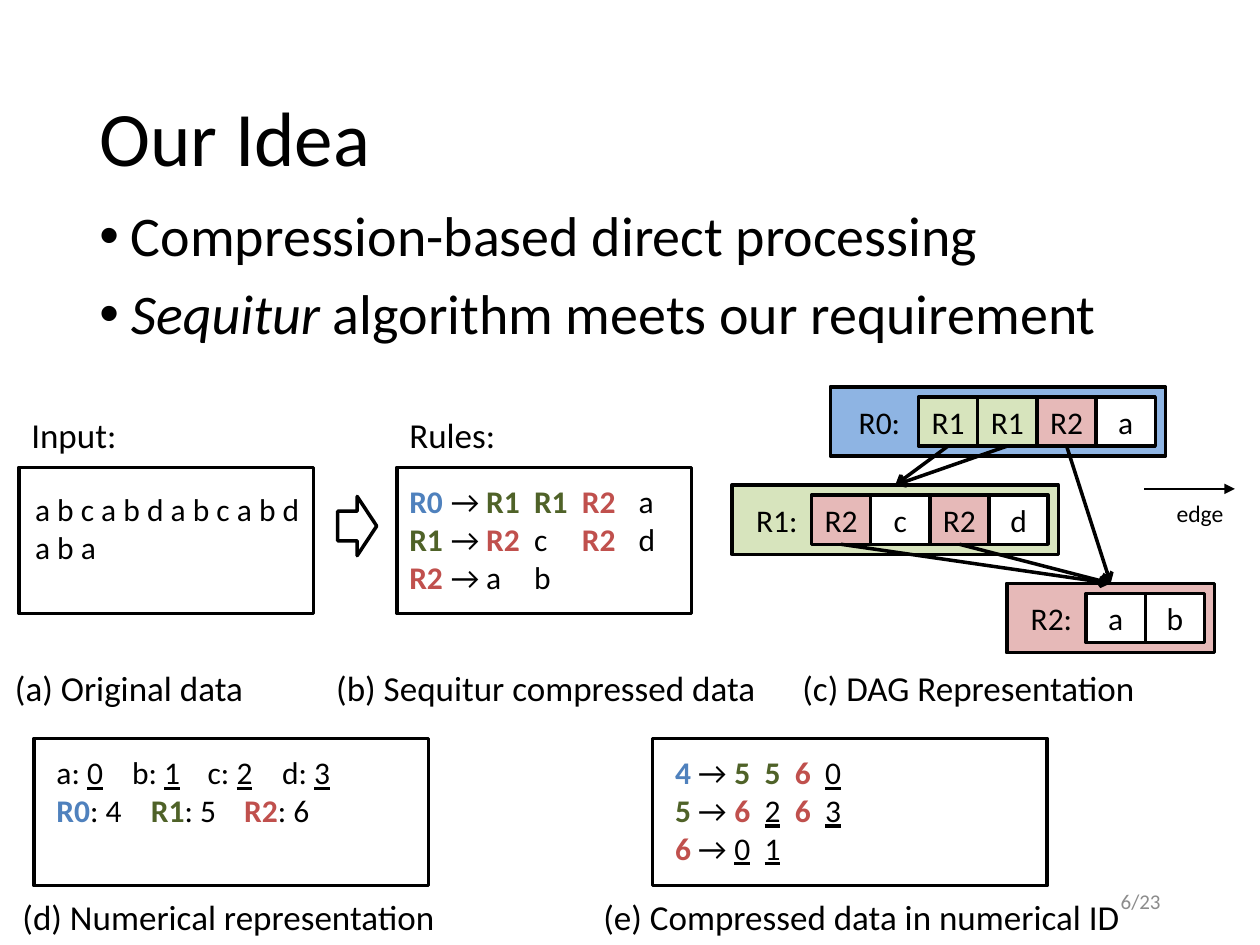
from dataclasses import dataclass

from lxml.etree import SubElement
from pptx import Presentation
from pptx.dml.color import RGBColor
from pptx.enum.shapes import MSO_CONNECTOR as Connector, MSO_SHAPE as Shape
from pptx.enum.text import MSO_ANCHOR as Anchor, PP_ALIGN as Align
from pptx.oxml.ns import qn
from pptx.util import Inches, Pt


@dataclass(frozen=True)
class Theme:
    font: str = "Calibri"
    black: str = "000000"
    white: str = "FFFFFF"
    grey: str = "8C8C8C"
    title: float = 44
    bullet: float = 32
    caption: float = 20
    body: float = 18
    edge: float = 13.5
    number: float = 12
    line: float = 2


THEME = Theme()
WIDTH, HEIGHT = 10, 7.5

# Span styles: one colour per rule, italics for terms, underlines for word IDs
STYLES = {
    "": {},
    "R0": {"color": "4F81BD", "bold": True},
    "R1": {"color": "4F6228", "bold": True},
    "R2": {"color": "C0504D", "bold": True},
    "term": {"italic": True},
    "id": {"underline": True},
}

# Content: a line is a list of (text, style) spans; tabs separate its columns
TITLE = [[("Our Idea", "")]]
BULLETS = [
    [("Compression-based direct processing", "")],
    [("Sequitur", "term"), (" algorithm meets our requirement", "")],
]
INPUT = [[("a b c a b d a b c a b d a b a", "")]]
RULES = [
    [("R0", "R0"), ("\t→\t", ""), ("R1\tR1\t", "R1"), ("R2", "R2"), ("\ta", "")],
    [("R1", "R1"), ("\t→\t", ""), ("R2", "R2"), ("\tc\t", ""), ("R2", "R2"), ("\td", "")],
    [("R2", "R2"), ("\t→\ta\tb", "")],
]
NUMBERING = [
    [("a: ", ""), ("0", "id"), ("\tb: ", ""), ("1", "id"),
     ("\tc: ", ""), ("2", "id"), ("\td: ", ""), ("3", "id")],
    [("R0", "R0"), (": 4\t", ""), ("R1", "R1"), (": 5\t", ""), ("R2", "R2"), (": 6", "")],
]
NUMERIC_RULES = [
    [("4", "R0"), (" →\t", ""), ("5\t5\t", "R1"), ("6", "R2"), ("\t", ""), ("0", "id")],
    [("5", "R1"), (" →\t", ""), ("6", "R2"), ("\t", ""), ("2", "id"),
     ("\t", ""), ("6", "R2"), ("\t", ""), ("3", "id")],
    [("6", "R2"), (" →\t", ""), ("0", "id"), ("\t", ""), ("1", "id")],
]
RULE_STOPS = [[0.33, 0.61, 0.99, 1.37, 1.82]] * 3
NUMBERING_STOPS = [[0.6, 1.2, 1.79], [0.75, 1.49]]
NUMERIC_STOPS = [[0.47, 0.71, 0.95, 1.19]] * 3

# Panels: frame, text position, lines, tab stops
TOP_FRAME, BOTTOM_FRAME = (2.34, 1.16), (3.13, 1.17)
PANELS = [
    ((0.15, 3.71, *TOP_FRAME), (0.18, 3.84, 2.43, 0.71), INPUT, None),
    ((3.15, 3.71, *TOP_FRAME), (3.15, 3.78, 2.5, 1.01), RULES, RULE_STOPS),
    ((0.27, 5.86, *BOTTOM_FRAME), (0.35, 5.93, 2.66, 0.71), NUMBERING, NUMBERING_STOPS),
    ((5.18, 5.86, *BOTTOM_FRAME), (5.26, 5.93, 2.66, 1.01), NUMERIC_RULES, NUMERIC_STOPS),
]
CAPTIONS = [
    ("Input:", 0.15, 3.23, 1.25),
    ("Rules:", 3.15, 3.23, 1.25),
    ("(a) Original data", 0.02, 5.24, 2.81),
    ("(b) Sequitur compressed data", 2.57, 5.24, 3.67),
    ("(c) DAG Representation", 6.27, 5.24, 3.13),
    ("(d) Numerical representation", 0.08, 7.06, 4.05),
    ("(e) Compressed data in numerical ID", 4.69, 7.06, 4.71),
]

# DAG nodes: name -> left edge, label width, fill, symbols
NODES = {
    "R0": (6.59, 0.62, "8EB4E3", ["R1", "R1", "R2", "a"]),
    "R1": (5.81, 0.55, "D7E4BD", ["R2", "c", "R2", "d"]),
    "R2": (7.99, 0.55, "E6B9B8", ["a", "b"]),
}
DAG_TOP, DAG_STEP = 3.07, 0.78
CELL_W, CELL_H, PAD = 0.47, 0.39, 0.08


def write(shape, lines, size=THEME.body, color=THEME.black, align=Align.LEFT,
          anchor=Anchor.TOP, stops=None, spacing=None, before=None, bullet=None, inset=None):
    frame = shape.text_frame
    frame.word_wrap = True
    frame.vertical_anchor = anchor
    if inset is not None:
        frame.margin_left = frame.margin_right = Inches(inset)
        frame.margin_top = frame.margin_bottom = Inches(inset)
    for index, spans in enumerate(lines):
        para = frame.add_paragraph() if index else frame.paragraphs[0]
        para.alignment = align
        para.line_spacing = spacing
        if before is not None:
            para.space_before = Pt(before)
        properties = para._p.get_or_add_pPr()
        if bullet:
            properties.set("marL", str(Inches(0.25)))
            properties.set("indent", str(-Inches(0.25)))
            SubElement(properties, qn("a:buFont"), typeface="Arial")
            SubElement(properties, qn("a:buChar"), char=bullet)
        if stops:
            tabs = SubElement(properties, qn("a:tabLst"))
            for stop in stops[index]:
                SubElement(tabs, qn("a:tab"), pos=str(Inches(stop)), algn="l")
        for text, style in spans:
            look = STYLES[style]
            span = para.add_run()
            span.text = text
            font = span.font
            font.name, font.size = THEME.font, Pt(size)
            font.color.rgb = RGBColor.from_string(look.get("color", color))
            font.bold = look.get("bold", False)
            font.italic = look.get("italic", False)
            font.underline = look.get("underline", False)


def add_text(page, place, lines, **style):
    box = page.shapes.add_textbox(*map(Inches, place))
    write(box, lines, **style)
    return box


def add_box(page, place, fill=None, outlined=True, kind=Shape.RECTANGLE, text=None):
    box = page.shapes.add_shape(kind, *map(Inches, place))
    box.shadow.inherit = False
    if fill:
        box.fill.solid()
        box.fill.fore_color.rgb = RGBColor.from_string(fill)
    else:
        box.fill.background()
    if outlined:
        box.line.color.rgb = RGBColor.from_string(THEME.black)
        box.line.width = Pt(THEME.line)
    else:
        box.line.fill.background()
    if text:
        write(box, [[(text, "")]], align=Align.CENTER, anchor=Anchor.MIDDLE, inset=0)
    return box


def add_arrow(page, start=(0, 0), end=(0, 0), source=None, target=None,
              width=THEME.line, head="arrow"):
    arrow = page.shapes.add_connector(Connector.STRAIGHT, *map(Inches, (*start, *end)))
    if source is not None:
        arrow.begin_connect(source, 2)
        arrow.end_connect(target, 0)
    arrow.line.color.rgb = RGBColor.from_string(THEME.black)
    arrow.line.width = Pt(width)
    SubElement(arrow.line._get_or_add_ln(), qn("a:tailEnd"), type=head)
    SubElement(arrow._element.spPr, qn("a:effectLst"))


def add_dag(page):
    nodes, links = {}, []
    for row, (name, (left, label, fill, symbols)) in enumerate(NODES.items()):
        top = DAG_TOP + row * DAG_STEP
        width = label + len(symbols) * CELL_W + 2 * PAD
        nodes[name] = add_box(page, (left, top, width, CELL_H + 2 * PAD), fill)
        add_box(page, (left + PAD, top + PAD, label, CELL_H), fill, False, text=name + ":")
        for column, symbol in enumerate(symbols):
            place = (left + PAD + label + column * CELL_W, top + PAD, CELL_W, CELL_H)
            color = NODES[symbol][2] if symbol in NODES else THEME.white
            cell = add_box(page, place, color, text=symbol)
            if symbol in NODES:
                links.append((cell, symbol))
    for cell, symbol in links:
        add_arrow(page, source=cell, target=nodes[symbol])


def main():
    deck = Presentation()
    deck.slide_width, deck.slide_height = Inches(WIDTH), Inches(HEIGHT)
    page = deck.slides.add_slide(deck.slide_layouts[5])

    # Title and bullets
    title = page.shapes.title
    title.left, title.top, title.width, title.height = map(Inches, (0.69, 0.4, 8.62, 1.45))
    write(title, TITLE, size=THEME.title, anchor=Anchor.MIDDLE, spacing=0.9)
    add_text(page, (0.69, 1.6, 9.14, 1.64), BULLETS, size=THEME.bullet,
             spacing=0.9, before=10, bullet="•")

    # Panels, captions and the step from input to rules
    for frame, place, lines, stops in PANELS:
        add_box(page, frame)
        add_text(page, place, lines, stops=stops)
    for caption, left, top, width in CAPTIONS:
        add_text(page, (left, top, width, 0.44), [[(caption, "")]], size=THEME.caption)
    add_box(page, (2.68, 3.94, 0.31, 0.47), THEME.white, kind=Shape.RIGHT_ARROW)

    # Graph and its legend
    add_dag(page)
    add_arrow(page, (9.08, 3.88), (9.8, 3.88), width=1, head="triangle")
    add_text(page, (9.24, 3.91, 0.95, 0.33), [[("edge", "")]], size=THEME.edge)

    # Page number
    add_text(page, (7.06, 6.95, 2.25, 0.4), [[("6/23", "")]], size=THEME.number,
             color=THEME.grey, align=Align.RIGHT, anchor=Anchor.MIDDLE)

    deck.save("out.pptx")


if __name__ == "__main__":
    main()
